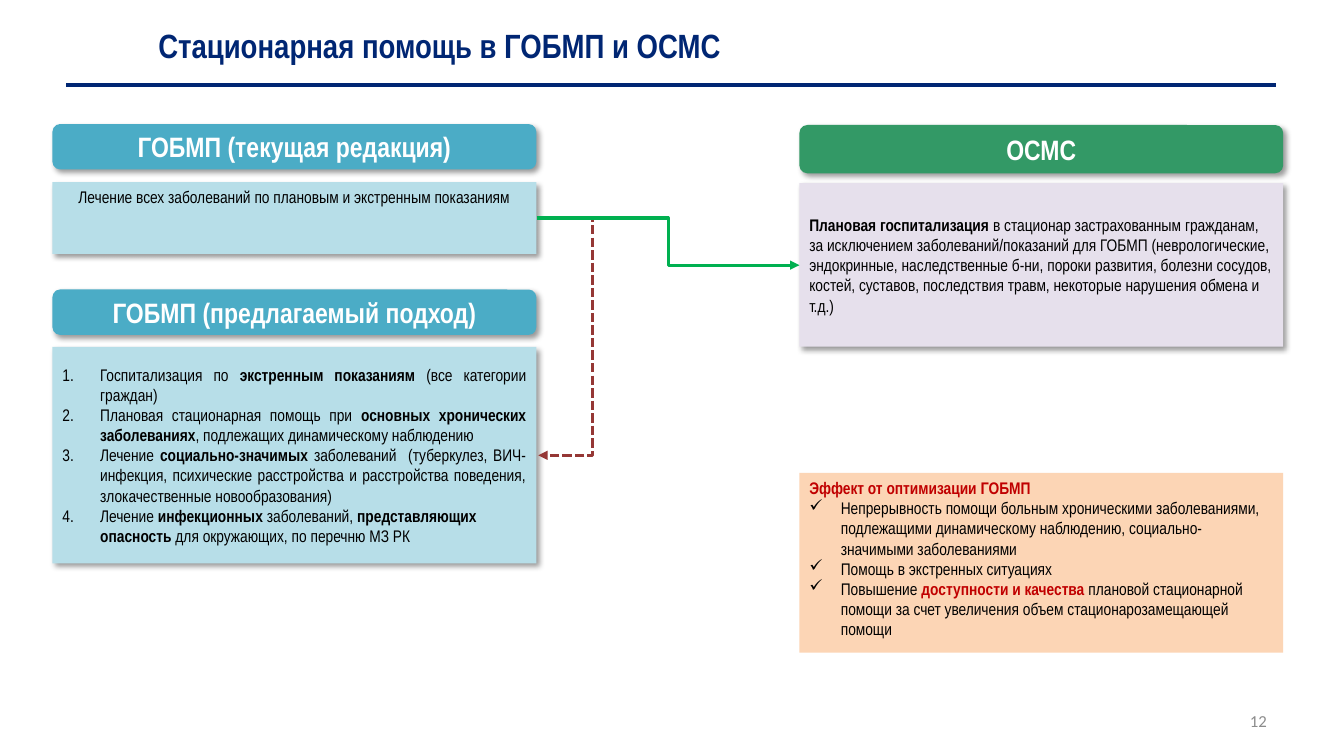
import pptx
import pptx.util
import pptx.dml.color
import pptx.enum.shapes
import pptx.enum.text
import pptx.oxml
import pptx.oxml.ns

Pt = pptx.util.Pt
SHAPE = pptx.enum.shapes.MSO_SHAPE
CONNECTOR = pptx.enum.shapes.MSO_CONNECTOR
ALIGN = pptx.enum.text.PP_ALIGN
ANCHOR = pptx.enum.text.MSO_ANCHOR
NS = pptx.oxml.ns.nsdecls("a")

LEFT, RIGHT, WIDTH = 37.5, 571, 345.6
NAVY, TEAL, GREEN, RED = "002673", "4BACC6", "339966", "C00000"
NUMBER = '<a:buAutoNum %s type="arabicPeriod"/>' % NS
CHECK = '<a:buChar %s char="✓"/>' % NS
SHADOW = ('<a:effectLst %s><a:outerShdw blurRad="50800" dist="38100" dir="2700000" algn="tl" rotWithShape="0">'
          '<a:srgbClr val="000000"><a:alpha val="40000"/></a:srgbClr></a:outerShdw></a:effectLst>' % NS)


def rgb(color):
    return pptx.dml.color.RGBColor.from_string(color)


def write(s, paragraphs, size=12, anchor=ANCHOR.MIDDLE, font="Arial Narrow"):
    """Each paragraph: alignment, bullet, indent, runs of (text, bold, color)."""
    tf = s.text_frame
    tf.word_wrap = True
    tf.vertical_anchor = anchor
    for i, (align, bullet, indent, runs) in enumerate(paragraphs):
        p = tf.paragraphs[0] if i == 0 else tf.add_paragraph()
        p.alignment = align
        if bullet:
            pPr = p._p.get_or_add_pPr()
            pPr.set("marL", str(Pt(indent)))
            pPr.set("indent", str(-Pt(indent)))
            pPr.append(pptx.oxml.parse_xml(bullet))
        for text, bold, color in runs:
            r = p.add_run()
            r.text = text
            r.font.name = font
            r.font.size = Pt(size)
            r.font.bold = bold
            r.font.color.rgb = rgb(color)


prs = pptx.Presentation()
prs.slide_width, prs.slide_height = Pt(960), Pt(540)
slide = prs.slides.add_slide(prs.slide_layouts[6])
shapes = slide.shapes
BLACK, WHITE = "000000", "FFFFFF"

# Slide number and title
s = shapes.add_textbox(Pt(688), Pt(500.5), Pt(224), Pt(28.8))
write(s, [(ALIGN.RIGHT, None, 0, [("12", False, "8C8C8C")])], font="Calibri")
s = shapes.add_textbox(Pt(106), Pt(10), Pt(623.5), Pt(44))
write(s, [(ALIGN.LEFT, None, 0, [("Стационарная помощь в ГОБМП и ОСМС", True, NAVY)])], size=24)

# Section headings
headings = [
    (LEFT, 88.6, 32.4, TEAL, "ГОБМП (текущая редакция)"),
    (LEFT, 206.8, 32.4, TEAL, "ГОБМП (предлагаемый подход)"),
    (RIGHT, 89.3, 34.5, GREEN, "ОСМС"),
]
for x, y, height, fill, text in headings:
    s = shapes.add_shape(SHAPE.ROUNDED_RECTANGLE, Pt(x), Pt(y), Pt(WIDTH), Pt(height))
    s.fill.solid()
    s.fill.fore_color.rgb = rgb(fill)
    s.line.fill.background()
    s._element.spPr.append(pptx.oxml.parse_xml(SHADOW))
    write(s, [(ALIGN.CENTER, None, 0, [(text, True, WHITE)])], size=20)

# Content of the panels
current = [(ALIGN.CENTER, None, 0, [
    ("Лечение всех заболеваний по плановым и экстренным показаниям", False, BLACK)])]
proposed = [
    (ALIGN.JUSTIFY, NUMBER, 27, [
        ("Госпитализация по ", False, BLACK),
        ("экстренным показаниям ", True, BLACK),
        ("(все категории граждан)", False, BLACK)]),
    (ALIGN.JUSTIFY, NUMBER, 27, [
        ("Плановая стационарная помощь при ", False, BLACK),
        ("основных хронических заболеваниях", True, BLACK),
        (", подлежащих динамическому наблюдению", False, BLACK)]),
    (ALIGN.JUSTIFY, NUMBER, 27, [
        ("Лечение ", False, BLACK),
        ("социально-значимых", True, BLACK),
        (" заболеваний  (туберкулез, ВИЧ-инфекция, психические расстройства и расстройства "
         "поведения, злокачественные новообразования)", False, BLACK)]),
    (ALIGN.LEFT, NUMBER, 27, [
        ("Лечение ", False, BLACK),
        ("инфекционных", True, BLACK),
        (" заболеваний, ", False, BLACK),
        ("представляющих опасность ", True, BLACK),
        ("для окружающих, по перечню МЗ РК", False, BLACK)]),
]
insurance = [(ALIGN.LEFT, None, 0, [
    ("Плановая госпитализация ", True, BLACK),
    ("в стационар застрахованным гражданам, за исключением заболеваний/показаний для ГОБМП "
     "(неврологические, эндокринные, наследственные б-ни, пороки развития, болезни сосудов, "
     "костей, суставов, последствия травм, некоторые нарушения обмена и т.д.)", False, BLACK)])]
effect = [
    (ALIGN.LEFT, None, 0, [("Эффект от оптимизации ГОБМП", True, RED)]),
    (ALIGN.LEFT, CHECK, 22.5, [
        ("Непрерывность помощи больным хроническими заболеваниями, подлежащими динамическому "
         "наблюдению, социально-значимыми заболеваниями", False, BLACK)]),
    (ALIGN.LEFT, CHECK, 22.5, [("Помощь в экстренных ситуациях", False, BLACK)]),
    (ALIGN.LEFT, CHECK, 22.5, [
        ("Повышение ", False, BLACK),
        ("доступности и качества ", True, RED),
        ("плановой стационарной помощи за счет увеличения объем стационарозамещающей помощи",
         False, BLACK)]),
]

# Panels
panels = [
    (LEFT, 130.2, 51.2, "B7DEE8", True, ANCHOR.TOP, current),
    (LEFT, 247.8, 154.6, "B7DEE8", True, ANCHOR.MIDDLE, proposed),
    (RIGHT, 130.9, 116.8, "E6E0EC", True, ANCHOR.MIDDLE, insurance),
    (RIGHT, 337.8, 128.4, "FCD5B5", False, ANCHOR.TOP, effect),
]
for x, y, height, fill, shadow, anchor, paragraphs in panels:
    s = shapes.add_shape(SHAPE.RECTANGLE, Pt(x), Pt(y), Pt(WIDTH), Pt(height))
    s.fill.solid()
    s.fill.fore_color.rgb = rgb(fill)
    s.line.fill.background()
    if shadow:
        s._element.spPr.append(pptx.oxml.parse_xml(SHADOW))
    else:
        s.shadow.inherit = False
    write(s, paragraphs, anchor=anchor)

# Title rule and arrows; bend is the share of the width where an elbow turns
lines = [
    (CONNECTOR.STRAIGHT, 47.5, 60.5, 911.5, 60.5, NAVY, 3, None, None),
    (CONNECTOR.ELBOW, 383.5, 155.7, 384.5, 325.2, "953735", 2.25, "sysDash", 40),
    (CONNECTOR.ELBOW, 383.5, 155.7, 571, 189.4, "00B050", 2.25, None, 0.5),
]
for kind, x1, y1, x2, y2, color, width, dash, bend in lines:
    s = shapes.add_connector(kind, Pt(x1), Pt(y1), Pt(x2), Pt(y2))
    s.line.color.rgb = rgb(color)
    s.line.width = Pt(width)
    spPr = s._element.spPr
    ln = spPr.find(pptx.oxml.ns.qn("a:ln"))
    if dash:
        ln.append(pptx.oxml.parse_xml('<a:prstDash %s val="%s"/>' % (NS, dash)))
    if bend:
        ln.append(pptx.oxml.parse_xml('<a:tailEnd %s type="triangle"/>' % NS))
        guide = '<a:gd %s name="adj1" fmla="val %d"/>' % (NS, bend * 100000)
        spPr.prstGeom.get_or_add_avLst().append(pptx.oxml.parse_xml(guide))
    spPr.append(pptx.oxml.parse_xml("<a:effectLst %s/>" % NS))

prs.save("out.pptx")
